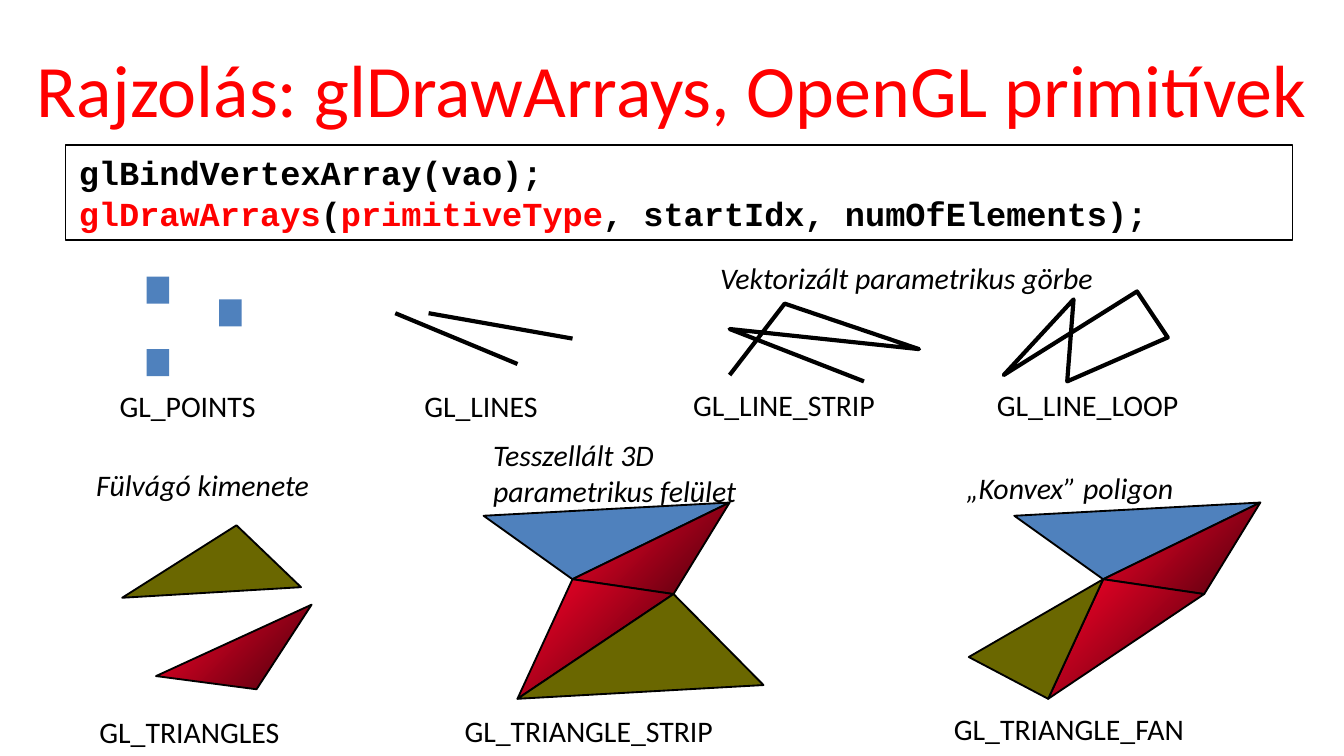
"""Build the slide on OpenGL drawing calls and primitive types."""
from dataclasses import dataclass

from lxml.etree import SubElement
from pptx import Presentation
from pptx.dml.color import RGBColor as RGB
from pptx.enum.shapes import MSO_CONNECTOR as CONN, MSO_SHAPE as SHAPE
from pptx.enum.text import MSO_ANCHOR as ANCHOR, PP_ALIGN as ALIGN
from pptx.oxml.ns import qn
from pptx.util import Cm, Pt


@dataclass(frozen=True)
class Theme:
    black = RGB.from_string("000000")
    red = RGB.from_string("FF0000")
    blue = RGB.from_string("4F81BD")
    olive = RGB.from_string("6A6700")
    crimson = (RGB.from_string("FC0128"), RGB.from_string("4B000C"))
    sans, mono = "Calibri", "Courier New"
    title, code, label = Pt(39.6), Pt(18), Pt(16)
    thin, thick = Pt(1), Pt(2.25)


T = Theme()
prs = Presentation()
prs.slide_width, prs.slide_height = Cm(25.4), Cm(14.29)
s = prs.slides.add_slide(prs.slide_layouts[6])


def draw_path(points, width, fill=None, close=True):
    (x0, y0), *rest = [(Cm(x), Cm(y)) for x, y in points]
    builder = s.shapes.build_freeform(x0, y0)
    builder.add_line_segments(rest, close=close)
    sp = builder.convert_to_shape()
    sp.shadow.inherit = False
    sp.line.color.rgb, sp.line.width = T.black, width
    if fill is None:
        sp.fill.background()
    elif fill == T.crimson:
        sp.fill.gradient()
        sp.fill.gradient_angle = 315
        for stop, color in zip(sp.fill.gradient_stops, fill):
            stop.color.rgb = color
    else:
        sp.fill.solid()
        sp.fill.fore_color.rgb = fill


def add_text(x, y, w, h, lines, size=T.label, color=T.black, italic=False):
    tf = s.shapes.add_textbox(Cm(x), Cm(y), Cm(w), Cm(h)).text_frame
    tf.word_wrap = False
    for i, line in enumerate(lines):
        p = tf.paragraphs[0] if i == 0 else tf.add_paragraph()
        p.text = line
        p.font.name, p.font.size, p.font.italic = T.sans, size, italic
        p.font.color.rgb = color
    return tf


tf = add_text(0, 0.46, 25.4, 2.39, ["Rajzolás: glDrawArrays, OpenGL primitívek"], T.title, T.red)
tf.word_wrap = True
tf.vertical_anchor = ANCHOR.MIDDLE
tf.paragraphs[0].alignment = ALIGN.CENTER

for x1, y1, x2, y2 in [(7.47, 5.92, 9.78, 6.88), (8.1, 5.92, 10.82, 6.4)]:
    line = s.shapes.add_connector(CONN.STRAIGHT, Cm(x1), Cm(y1), Cm(x2), Cm(y2))
    line.line.color.rgb, line.line.width = T.black, T.thick
    SubElement(line._element.spPr, qn("a:effectLst"))

line_strip = [(13.79, 7.09), (14.83, 5.74), (17.37, 6.6), (13.79, 6.22), (16.33, 7.21)]
line_loop = [(20.29, 5.66), (18.97, 7.09), (21.49, 5.51), (22.07, 6.38), (20.17, 7.21)]
draw_path(line_strip, T.thick, close=False)
draw_path(line_loop, T.thick)

hub, inner, tip, bottom = (10.82, 10.95), (12.73, 11.23), (13.79, 9.5), (9.78, 13.21)
shared = [
    ([hub, (9.14, 9.75), tip], T.blue),
    ([hub, inner, tip], T.crimson),
    ([hub, inner, bottom], T.crimson),
]
strip = shared + [([(14.43, 12.95), inner, bottom], T.olive)]
fan = shared + [([(8.28, 12.42), hub, bottom], T.olive)]
separate = [
    ([(5.69, 11.1), (4.47, 9.93), (2.31, 11.3)], T.olive),
    ([(2.95, 12.78), (4.85, 13.03), (5.89, 11.43)], T.crimson),
]
for triangles, dx in [(strip, 0), (separate, 0), (fan, 10.03)]:
    for points, fill in triangles:
        draw_path([(x + dx, y) for x, y in points], T.thin, fill)

for x, y, w, name in [
    (2.01, 7.21, 3.12, "GL_POINTS"),
    (7.77, 7.21, 2.69, "GL_LINES"),
    (12.85, 7.19, 3.99, "GL_LINE_STRIP"),
    (18.59, 7.19, 3.99, "GL_LINE_LOOP"),
    (8.53, 13.34, 5.28, "GL_TRIANGLE_STRIP"),
    (1.63, 13.36, 3.96, "GL_TRIANGLES"),
    (17.78, 13.31, 4.93, "GL_TRIANGLE_FAN"),
]:
    add_text(x, y, w, 0.94, [name])

code = s.shapes.add_shape(SHAPE.RECTANGLE, Cm(1.24), Cm(2.74), Cm(23.19), Cm(1.8))
code.shadow.inherit = False
code.fill.background()
code.line.color.rgb, code.line.width = T.black, T.thin
tf = code.text_frame
for i, runs in enumerate([
    [("glBindVertexArray(vao);", T.black)],
    [("glDrawArrays", T.red), ("(", T.black), ("primitiveType", T.red),
     (", startIdx, numOfElements);", T.black)],
]):
    p = tf.paragraphs[0] if i == 0 else tf.add_paragraph()
    p.alignment = ALIGN.LEFT
    p.font.name, p.font.size, p.font.bold = T.mono, T.code, True
    for text, color in runs:
        r = p.add_run()
        r.text, r.font.color.rgb = text, color

for x, y, w, h, lines in [
    (13.36, 4.78, 7.65, 0.94, ["Vektorizált parametrikus görbe"]),
    (9.07, 8.13, 5.16, 1.63, ["Tesszellált 3D", "parametrikus felület"]),
    (18.01, 8.76, 4.5, 0.94, ["„Konvex” poligon"]),
    (1.57, 8.69, 4.57, 0.94, ["Fülvágó kimenete"]),
]:
    add_text(x, y, w, h, lines, italic=True)

for x, y in [(4.14, 5.66), (2.77, 5.23), (2.77, 6.6)]:
    sp = s.shapes.add_shape(SHAPE.RECTANGLE, Cm(x), Cm(y), Cm(0.43), Cm(0.51))
    sp.shadow.inherit = False
    sp.fill.solid()
    sp.fill.fore_color.rgb = T.blue
    sp.line.fill.background()

prs.save("out.pptx")
